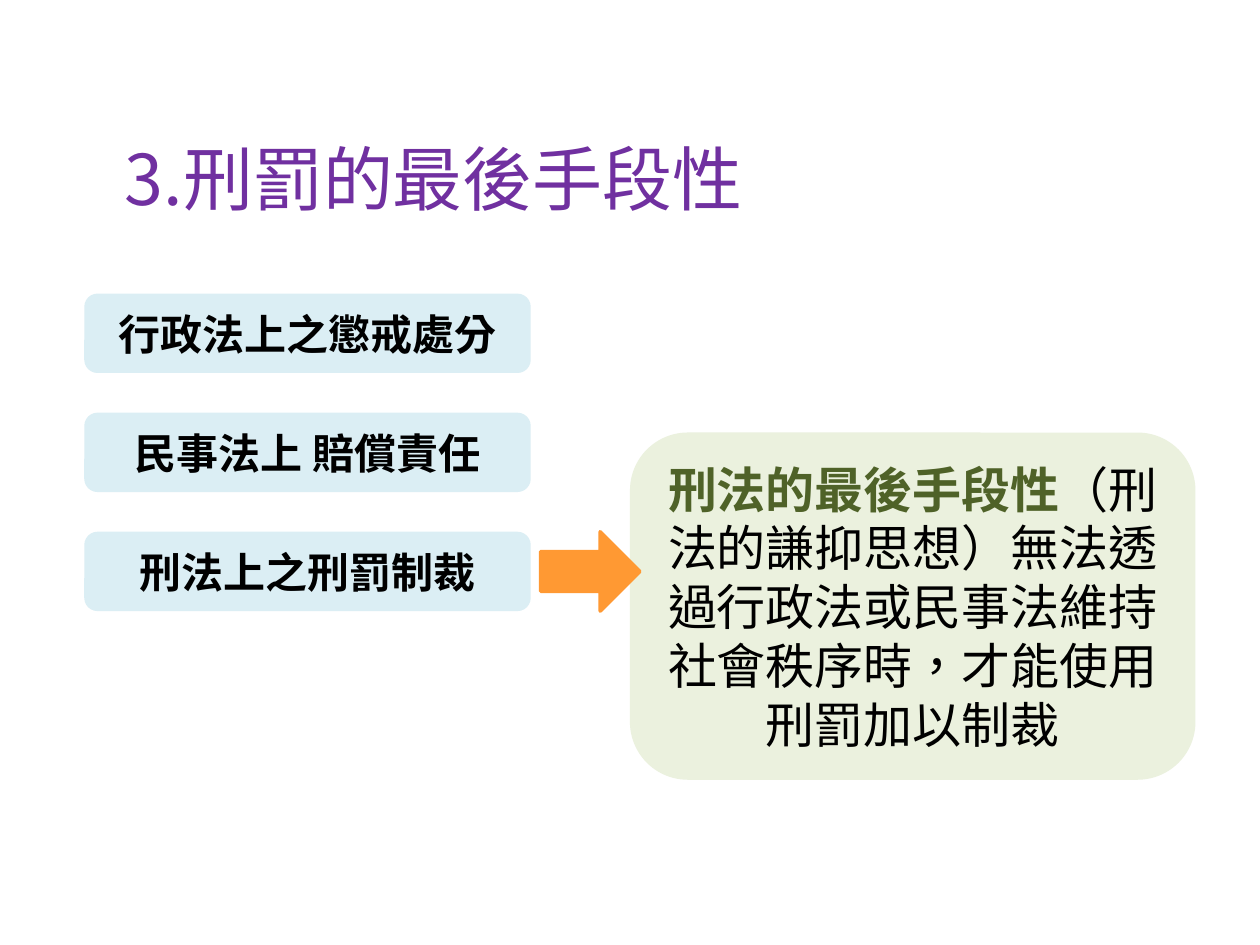
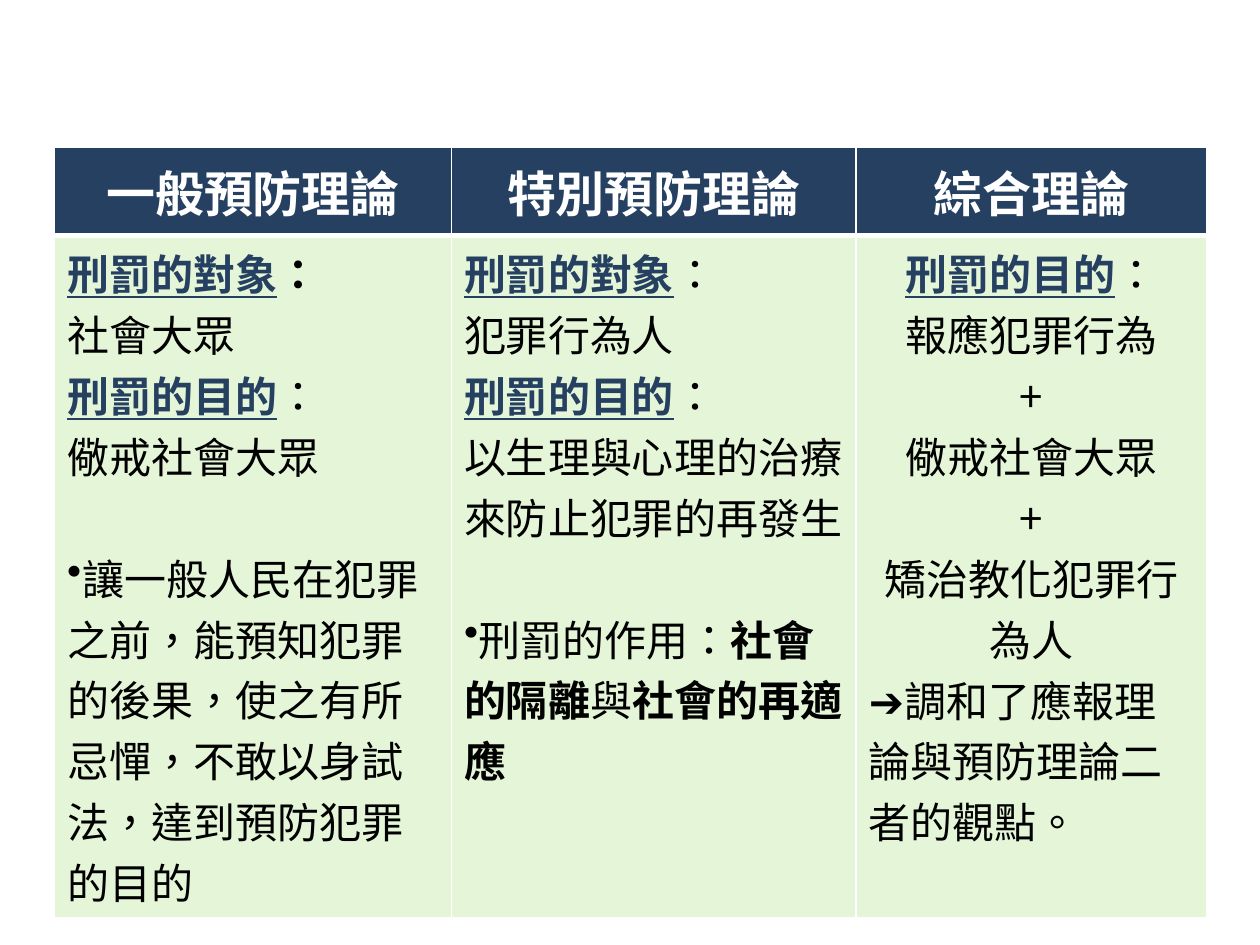
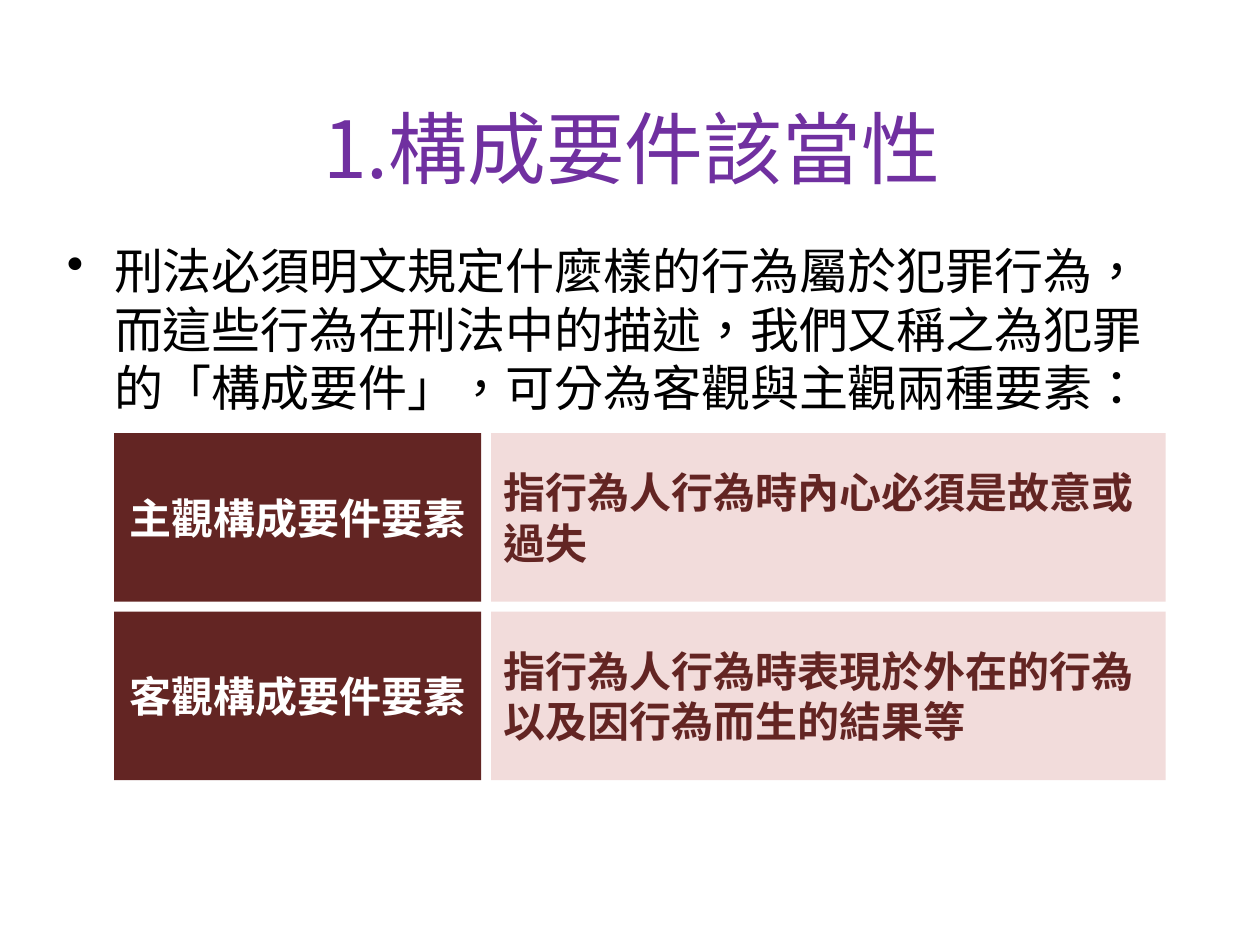
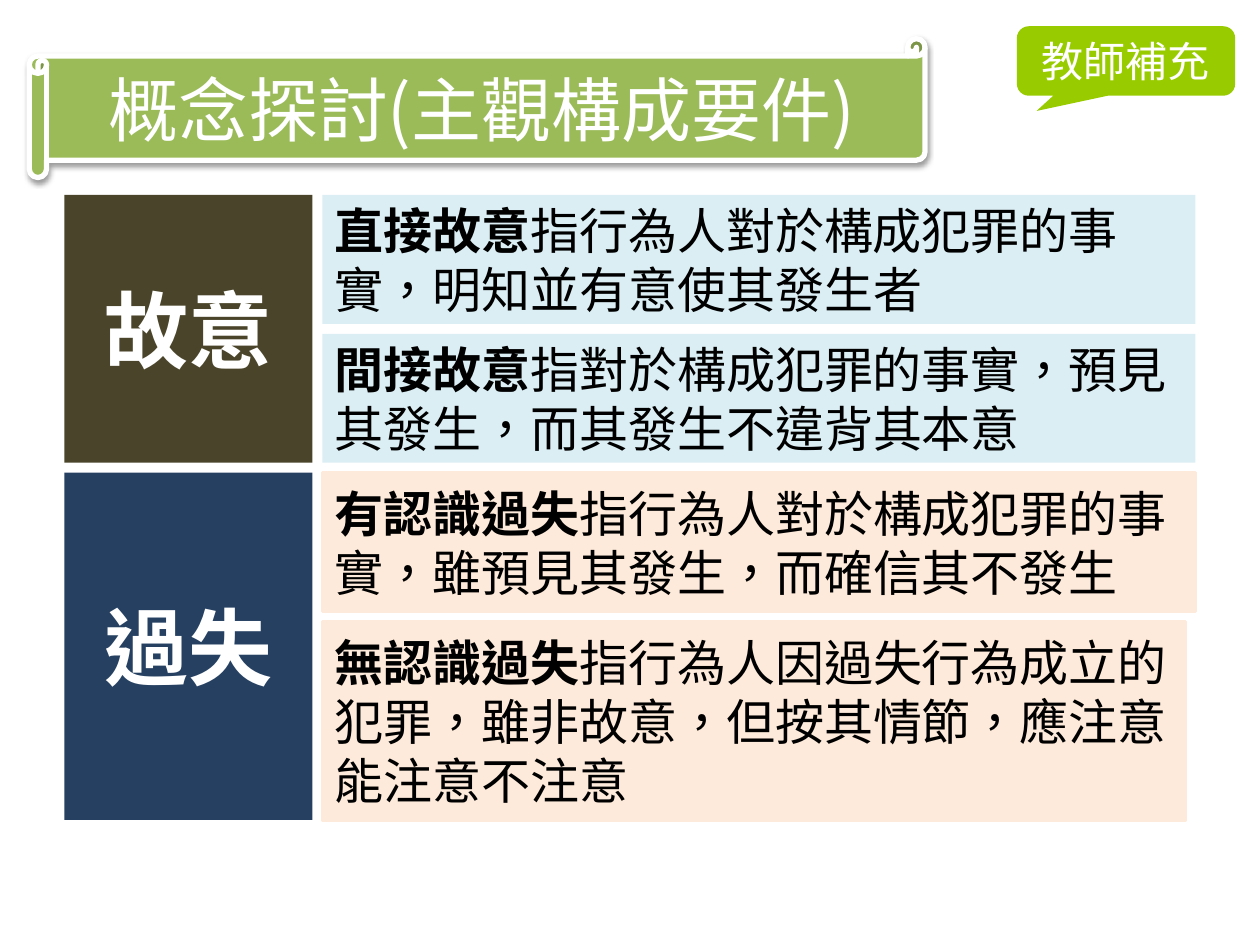
"""Build four slides on criminal law: last resort, theories, elements and intent."""
from dataclasses import dataclass

from lxml.etree import SubElement
from pptx import Presentation
from pptx.dml.color import RGBColor
from pptx.enum.lang import MSO_LANGUAGE_ID as Lang
from pptx.enum.shapes import MSO_SHAPE as Shape
from pptx.enum.text import MSO_ANCHOR as Anchor, PP_ALIGN as Align
from pptx.oxml import parse_xml
from pptx.oxml.ns import nsdecls, qn
from pptx.util import Cm, Pt


@dataclass(frozen=True)
class Theme:
    sans: str = "Noto Sans CJK SC"
    latin: str = "Calibri"
    badge_font: str = "Noto Sans CJK JP"
    black: str = "000000"
    white: str = "FFFFFF"
    purple: str = "7030A0"
    sky: str = "DBEEF4"
    sage: str = "EBF1DE"
    moss: str = "4F6228"
    orange: str = "FF9933"
    navy: str = "254061"
    mint: str = "E5F6D8"
    maroon: str = "632523"
    rose: str = "F2DCDB"
    olive: str = "4A452A"
    peach: str = "FDEADA"
    scroll: str = "9BBB59"
    lime: str = "99CC00"
    small: int = 24
    medium: int = 28
    title: int = 40
    big_title: int = 45
    huge: int = 48
    block_gap: float = 34.75


T = Theme()
BOLD = dict(bold=True)
LABEL = dict(bold=True, underline=True, color=T.navy)

LAST_RESORT = "3.刑罰的最後手段性"
SANCTIONS = ["行政法上之懲戒處分", "民事法上 賠償責任", "刑法上之刑罰制裁"]
RESORT_NOTE = [
    ("刑法的最後手段性", dict(bold=True, color=T.moss)),
    "（刑法的謙抑思想）無法透過行政法或民事法維持社會秩序時，才能使用刑罰加以制裁",
]

TARGET, PURPOSE = ("刑罰的對象", LABEL), ("刑罰的目的", LABEL)
THEORIES = [
    dict(
        name="一般預防理論",
        width=8,
        lines=[[TARGET, ("：", BOLD)], "社會大眾", [PURPOSE, "："], "儆戒社會大眾"],
        align=Align.LEFT,
        bullet=True,
        closing="讓一般人民在犯罪之前，能預知犯罪的後果，使之有所忌憚，不敢以身試法，達到預防犯罪的目的",
    ),
    dict(
        name="特別預防理論",
        width=8.16,
        lines=[[TARGET, "："], "犯罪行為人", [PURPOSE, "："], "以生理與心理的治療來防止犯罪的再發生"],
        align=Align.LEFT,
        bullet=True,
        closing=["刑罰的作用：", ("社會的隔離", BOLD), "與", ("社會的再適應", BOLD)],
    ),
    dict(
        name="綜合理論",
        width=7.06,
        lines=[[PURPOSE, "："], "報應犯罪行為", "+", "儆戒社會大眾", "+", "矯治教化犯罪行為人"],
        align=Align.CENTER,
        bullet=False,
        closing="➔調和了應報理論與預防理論二者的觀點。",
    ),
]

ELEMENTS_TITLE = "1.構成要件該當性"
ELEMENTS_INTRO = (
    "刑法必須明文規定什麼樣的行為屬於犯罪行為，而這些行為在刑法中的描述，"
    "我們又稱之為犯罪的「構成要件」，可分為客觀與主觀兩種要素："
)
ELEMENTS = [
    ("主觀構成要件要素", "指行為人行為時內心必須是故意或過失"),
    ("客觀構成要件要素", "指行為人行為時表現於外在的行為以及因行為而生的結果等"),
]

CONCEPT_TITLE = "概念探討(主觀構成要件)"
BADGE = "教師補充"
STATES = [
    ("故意", T.olive, T.sky, None, [
        ("直接故意", "指行為人對於構成犯罪的事實，明知並有意使其發生者", 17.6, 2.6),
        ("間接故意", "指對於構成犯罪的事實，預見其發生，而其發生不違背其本意", 17.6, 2.6),
    ]),
    ("過失", T.navy, T.peach, T.peach, [
        ("有認識過失", "指行為人對於構成犯罪的事實，雖預見其發生，而確信其不發生", 17.6, 2.8),
        ("無認識過失", "指行為人因過失行為成立的犯罪，雖非故意，但按其情節，應注意能注意不注意", 17.4, 4),
    ]),
]


def write(tf, text, size=T.small, color=T.black, font=T.sans, bold=False, align=Align.LEFT,
          after=0, bullet=False, indent=0, hanging=0, new=False):
    """Write one paragraph given as a string or a list of runs."""
    p = tf.add_paragraph() if new else tf.paragraphs[0]
    p.alignment = align
    if after:
        p.space_after = Pt(after)
    pPr = p._p.get_or_add_pPr()
    pPr.set("marL", str(Cm(indent)))
    pPr.set("indent", str(-Cm(hanging)))
    pPr.set("hangingPunct", "0")
    if bullet:
        SubElement(pPr, qn("a:buChar"), char="•")
    for part in [text] if isinstance(text, str) else text:
        words, style = (part, {}) if isinstance(part, str) else part
        r = p.add_run()
        r.text = words
        r.font.size = Pt(size)
        r.font.bold = style.get("bold", bold)
        r.font.underline = style.get("underline", False)
        r.font.color.rgb = RGBColor.from_string(style.get("color", color))
        r.font.language_id = Lang.TRADITIONAL_CHINESE
        r.font.name = font
        SubElement(r._r.get_or_add_rPr(), qn("a:ea"), typeface=T.sans if font == T.latin else font)


def add_text(s, box, text, anchor=Anchor.TOP, **fmt):
    tf = s.shapes.add_textbox(*map(Cm, box)).text_frame
    tf.word_wrap = True
    tf.vertical_anchor = anchor
    write(tf, text, **fmt)


def add_box(s, kind, box, fill, text=None, line=None, width=2, **fmt):
    sp = s.shapes.add_shape(kind, *map(Cm, box))
    sp.shadow.inherit = False
    sp.fill.solid()
    sp.fill.fore_color.rgb = RGBColor.from_string(fill)
    if line:
        sp.line.color.rgb = RGBColor.from_string(line)
        sp.line.width = Pt(width)
    else:
        sp.line.fill.background()
    if text:
        sp.text_frame.word_wrap = True
        sp.text_frame.vertical_anchor = Anchor.MIDDLE
        write(sp.text_frame, text, **fmt)
    return sp


def add_shadow(sp):
    effects = sp._element.spPr.find(qn("a:effectLst"))
    effects.append(parse_xml(
        f'<a:outerShdw {nsdecls("a")} blurRad="{Pt(3.1)}" dist="{Pt(1.6)}" dir="5400000" rotWithShape="0">'
        f'<a:srgbClr val="{T.black}"><a:alpha val="38000"/></a:srgbClr></a:outerShdw>'))


def style_cell(cell, fill, top, bottom):
    cell.fill.solid()
    cell.fill.fore_color.rgb = RGBColor.from_string(fill)
    tcPr = cell._tc.get_or_add_tcPr()
    for i, (side, width) in enumerate([("L", 1), ("R", 1), ("T", top), ("B", bottom)]):
        tcPr.insert(i, parse_xml(
            f'<a:ln{side} {nsdecls("a")} w="{Pt(width)}"><a:solidFill>'
            f'<a:srgbClr val="{T.white}"/></a:solidFill></a:ln{side}>'))


def last_resort_slide(s):
    add_text(s, (1.3, 2.6, 22.8, 2.2), LAST_RESORT, size=T.title, color=T.purple, indent=0.97)
    for i, name in enumerate(SANCTIONS):
        add_box(s, Shape.ROUNDED_RECTANGLE, (1.7, 5.92 + 2.4 * i, 9, 1.6), T.sky, name,
                bold=True, align=Align.CENTER)
    add_box(s, Shape.ROUNDED_RECTANGLE, (12.7, 8.72, 11.4, 7), T.sage, RESORT_NOTE,
            size=T.medium, align=Align.CENTER)
    add_box(s, Shape.RIGHT_ARROW, (10.9, 10.72, 2, 1.6), T.orange, line=T.orange)


def theories_slide(s):
    heights = (1.78, 13.75)
    total = sum(t["width"] for t in THEORIES)
    frame = s.shapes.add_table(2, len(THEORIES), *map(Cm, (1.1, 2.97, total, sum(heights))))
    table = frame.table
    table.first_row = table.horz_banding = False
    for row, height in zip(table.rows, heights):
        row.height = Cm(height)
    for i, theory in enumerate(THEORIES):
        table.columns[i].width = Cm(theory["width"])
        head, body = table.cell(0, i), table.cell(1, i)
        style_cell(head, T.navy, 1, 3)
        style_cell(body, T.mint, 3, 1)
        head.vertical_anchor = Anchor.MIDDLE
        write(head.text_frame, theory["name"], size=T.medium, color=T.white, bold=True,
              align=Align.CENTER)
        tf, last = body.text_frame, len(theory["lines"]) - 1
        for n, line in enumerate(theory["lines"]):
            gap = T.block_gap if theory["bullet"] and n == last else 0
            write(tf, line, align=theory["align"], after=gap, new=n > 0)
        write(tf, theory["closing"], bullet=theory["bullet"], new=True)


def elements_slide(s):
    add_text(s, (1.3, 1.57, 22.86, 2.77), ELEMENTS_TITLE, anchor=Anchor.MIDDLE,
             size=T.big_title, color=T.purple, align=Align.CENTER)
    add_text(s, (1.1, 4.72, 22.86, 12.57), ELEMENTS_INTRO, size=T.medium, font=T.latin,
             bullet=True, indent=0.95, hanging=0.95)
    for i, (name, meaning) in enumerate(ELEMENTS):
        top = 8.73 + 3.6 * i
        add_box(s, Shape.RECTANGLE, (2.3, top, 7.4, 3.4), T.maroon, name,
                color=T.white, bold=True, align=Align.CENTER)
        add_box(s, Shape.RECTANGLE, (9.9, top, 13.6, 3.4), T.rose, meaning,
                color=T.maroon, bold=True)


def concept_slide(s):
    banner = add_box(s, Shape.HORIZONTAL_SCROLL, (0.59, 0.78, 18.06, 2.8), T.scroll, CONCEPT_TITLE,
                     line=T.white, width=3, size=T.title, color=T.white, align=Align.CENTER)
    add_shadow(banner)
    top, gap = 3.93, 0.2
    for name, dark, pale, line, kinds in STATES:
        height = sum(k[3] for k in kinds) + gap * (len(kinds) - 1)
        add_box(s, Shape.RECTANGLE, (1.3, top, 5, height), dark, name, size=T.huge,
                color=T.white, font=T.latin, bold=True, align=Align.CENTER)
        for term, meaning, w, h in kinds:
            add_box(s, Shape.RECTANGLE, (6.5, top, w, h), pale, [(term, BOLD), meaning],
                    line=line, size=T.medium, font=T.latin)
            top += h + gap
    badge = add_box(s, Shape.ROUNDED_RECTANGULAR_CALLOUT, (20.5, 0.53, 4.4, 1.4), T.lime, BADGE,
                    color=T.white, font=T.badge_font, align=Align.CENTER)
    for i, value in enumerate((-0.41, 0.72, 0.17)):
        badge.adjustments[i] = value


def main():
    prs = Presentation()
    prs.slide_width, prs.slide_height = Cm(25.4), Cm(19.05)
    for build in (last_resort_slide, theories_slide, elements_slide, concept_slide):
        build(prs.slides.add_slide(prs.slide_layouts[6]))
    prs.save("out.pptx")


if __name__ == "__main__":
    main()
